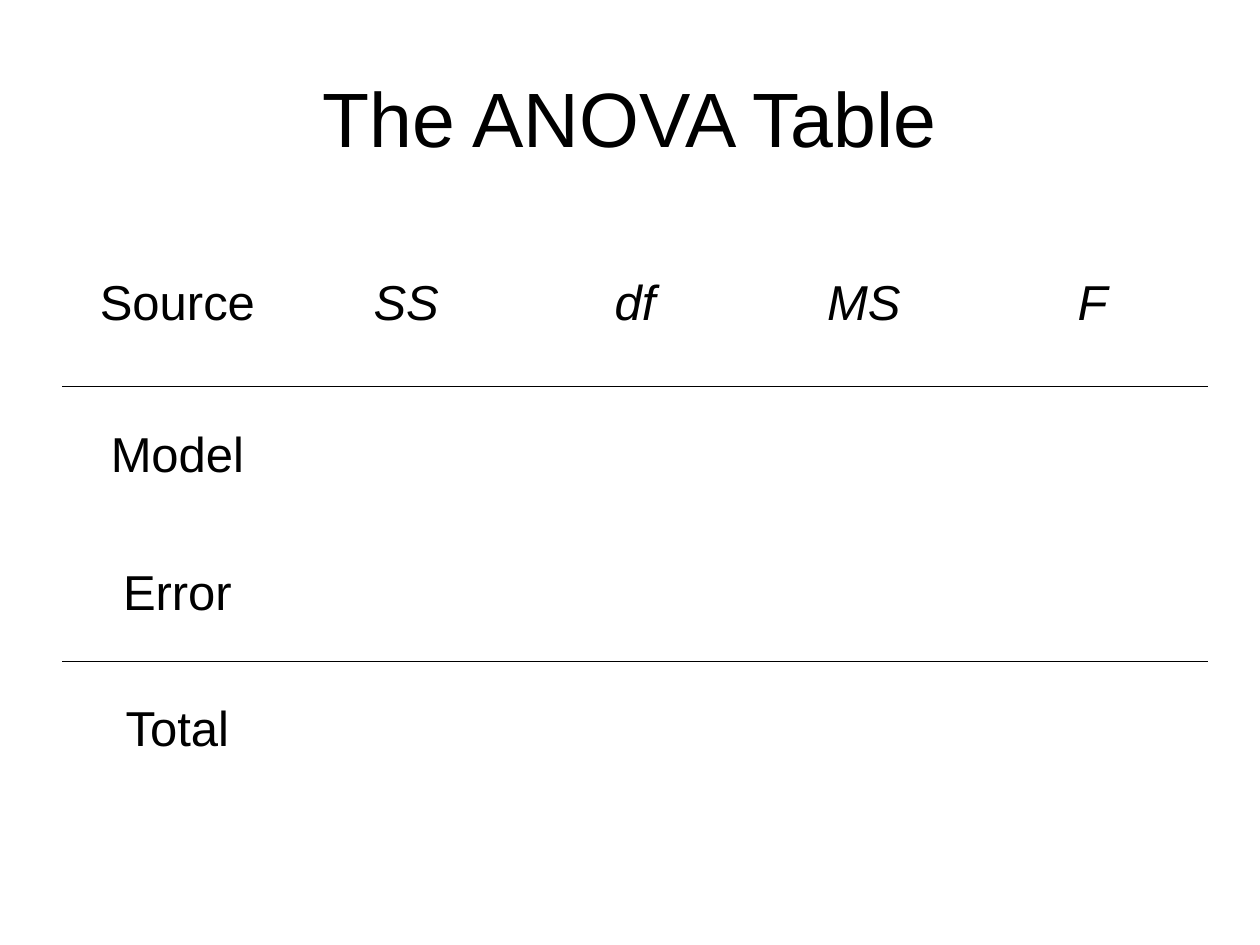
import pptx
import pptx.dml.color
import pptx.enum.text
import pptx.oxml
import pptx.oxml.ns
import pptx.util

Inches = pptx.util.Inches
BLACK = "000000"
HEADINGS = ["Source", "SS", "df", "MS", "F"]
SOURCES = ["Model", "Error", "Total"]
ROW_HEIGHTS = [1.32, 1.1, 1.09, 1.08]
RULED_ROWS = [0, 2]


def rgb(color):
    return pptx.dml.color.RGBColor.from_string(color)


def write(frame, text, size, italic=False):
    frame.word_wrap = True
    frame.vertical_anchor = pptx.enum.text.MSO_ANCHOR.MIDDLE
    paragraph = frame.paragraphs[0]
    paragraph.alignment = pptx.enum.text.PP_ALIGN.CENTER
    run = paragraph.add_run()
    run.text = text
    run.font.name = "Arial"
    run.font.size = pptx.util.Pt(size)
    run.font.italic = italic
    run.font.bold = False
    run.font.color.rgb = rgb(color=BLACK)


def rule(cell, side):
    border = pptx.oxml.parse_xml(
        f'<a:{side} {pptx.oxml.ns.nsdecls("a")} w="{pptx.util.Pt(1)}">'
        f'<a:solidFill><a:srgbClr val="{BLACK}"/></a:solidFill></a:{side}>'
    )
    cell._tc.get_or_add_tcPr().insert(0, border)


def add_title(slide, left, top, width, height):
    title = slide.shapes.add_textbox(left, top, width, height)
    write(title.text_frame, "The ANOVA Table", 44)


def add_anova_table(slide, left, top, width, height):
    anova = slide.shapes.add_table(
        len(ROW_HEIGHTS), len(HEADINGS), left, top, width, height
    ).table
    anova.first_row = False
    anova.horz_banding = False
    for column in anova.columns:
        column.width = width // len(HEADINGS)
    for row, row_height in zip(anova.rows, ROW_HEIGHTS):
        row.height = int(height * row_height / sum(ROW_HEIGHTS))
    for cell in anova.iter_cells():
        cell.fill.background()
    for index, heading in enumerate(HEADINGS):
        cell = anova.cell(0, index)
        cell.vertical_anchor = pptx.enum.text.MSO_ANCHOR.MIDDLE
        write(cell.text_frame, heading, 28, italic=index > 0)
    for index, source in enumerate(SOURCES, start=1):
        cell = anova.cell(index, 0)
        cell.vertical_anchor = pptx.enum.text.MSO_ANCHOR.MIDDLE
        write(cell.text_frame, source, 28)
    for index in RULED_ROWS:
        for column in range(len(HEADINGS)):
            rule(anova.cell(index, column), "lnB")
            rule(anova.cell(index + 1, column), "lnT")


def main():
    deck = pptx.Presentation()
    deck.slide_width = Inches(10)
    deck.slide_height = Inches(7.5)
    slide = deck.slides.add_slide(deck.slide_layouts[6])
    add_title(slide, Inches(0.5), Inches(0.3), Inches(9), Inches(1.25))
    add_anova_table(slide, Inches(0.5), Inches(1.75), Inches(9.08), Inches(4.58))
    deck.save("out.pptx")


if __name__ == "__main__":
    main()
